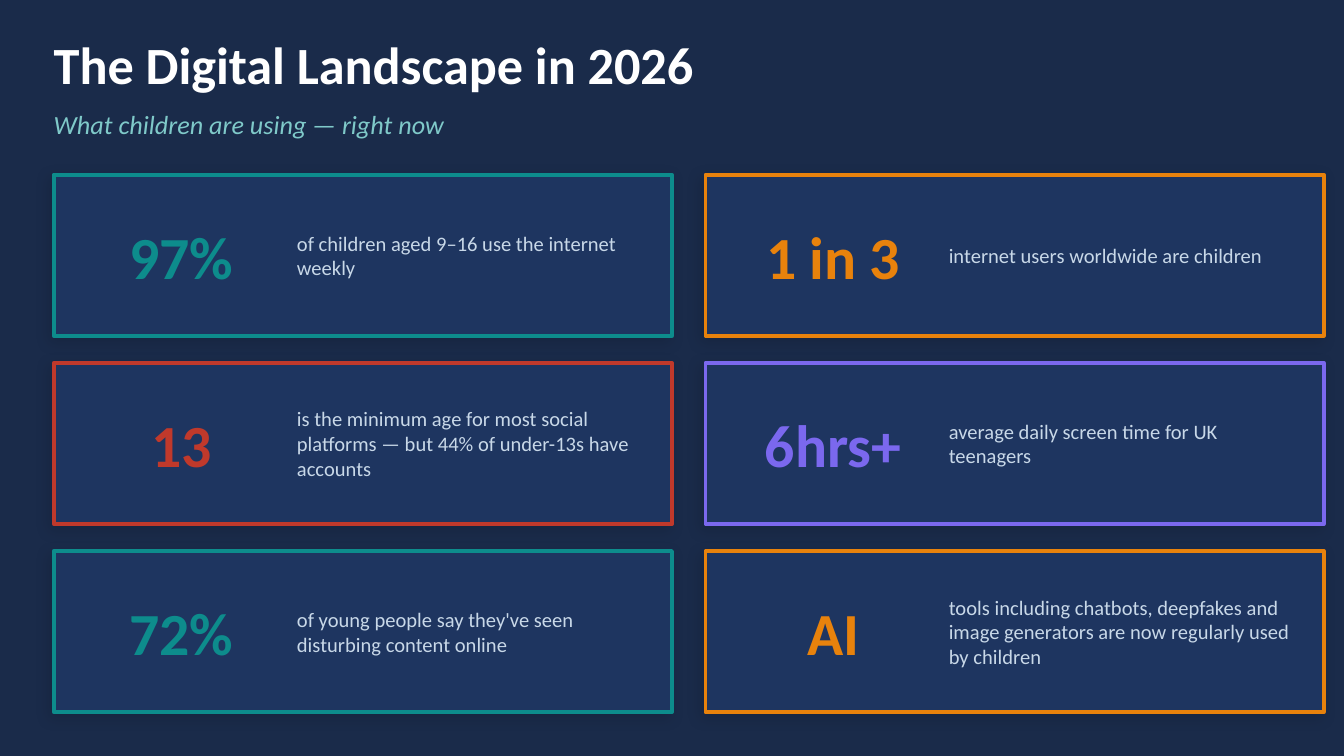
from lxml import etree
from pptx import Presentation
from pptx import util as u
from pptx.dml.color import RGBColor
from pptx.enum import shapes, text
from pptx.oxml import ns

Pt = u.Pt
NAVY = RGBColor(0x1A, 0x2B, 0x4A)
PANEL = RGBColor(0x1E, 0x35, 0x60)
WHITE = RGBColor(0xFF, 0xFF, 0xFF)
AQUA = RGBColor(0x7F, 0xC9, 0xC9)
MIST = RGBColor(0xC8, 0xD8, 0xE8)
TEAL = RGBColor(0x0D, 0x8C, 0x8C)
ORANGE = RGBColor(0xE8, 0x82, 0x0C)
RED = RGBColor(0xC0, 0x39, 0x2B)
VIOLET = RGBColor(0x7B, 0x68, 0xEE)

STATS = [
    ("97%", "of children aged 9–16 use the internet weekly", TEAL),
    ("1 in 3", "internet users worldwide are children", ORANGE),
    ("13", "is the minimum age for most social platforms — but 44% of under-13s have accounts", RED),
    ("6hrs+", "average daily screen time for UK teenagers", VIOLET),
    ("72%", "of young people say they've seen disturbing content online", TEAL),
    ("AI", "tools including chatbots, deepfakes and image generators are now regularly used by children", ORANGE),
]


def add_label(slide, box, words, color, size, inset=0, align=text.PP_ALIGN.LEFT, **style):
    frame = slide.shapes.add_textbox(*map(Pt, box)).text_frame
    layout = {"word_wrap": True, "vertical_anchor": text.MSO_ANCHOR.MIDDLE}
    for side in ("left", "top", "right", "bottom"):
        layout["margin_" + side] = Pt(inset)
    for name, value in layout.items():
        setattr(frame, name, value)
    para = frame.paragraphs[0]
    para.alignment = align
    run = para.add_run()
    run.text = words
    for name, value in {"name": "Calibri", "size": Pt(size), **style}.items():
        setattr(run.font, name, value)
    run.font.color.rgb = color


def add_shadow(shape, blur, dist, angle, alpha):
    shape.shadow.inherit = False
    effects = shape.element.spPr.find(ns.qn("a:effectLst"))
    outer = etree.SubElement(effects, ns.qn("a:outerShdw"))
    values = {"blurRad": Pt(blur), "dist": Pt(dist), "dir": angle * 60000,
              "algn": "bl", "rotWithShape": 0}
    for name, value in values.items():
        outer.set(name, str(int(value)) if name != "algn" else value)
    color = etree.SubElement(outer, ns.qn("a:srgbClr"), val="000000")
    etree.SubElement(color, ns.qn("a:alpha"), val=str(alpha * 1000))


def add_header(slide, box):
    left, top, width, height = box
    add_label(slide, (left, top, width, 46.8), "The Digital Landscape in 2026",
              WHITE, 28, bold=True)
    add_label(slide, (left, top + height - 25.2, width, 25.2),
              "What children are using — right now", AQUA, 14, italic=True)


def add_card(slide, box, figure, detail, color):
    left, top, width, height = box
    pad, split = 10.8, 126
    card = slide.shapes.add_shape(shapes.MSO_SHAPE.RECTANGLE, *map(Pt, box))
    card.fill.solid()
    card.fill.fore_color.rgb = PANEL
    card.line.color.rgb = color
    card.line.width = Pt(2)
    add_shadow(card, blur=8, dist=3, angle=135, alpha=12)
    add_label(slide, (left + pad, top, split - pad, height), figure, color, 32,
              align=text.PP_ALIGN.CENTER, bold=True)
    add_label(slide, (left + split, top, width - split - pad, height), detail,
              MIST, 11, inset=4.32)


def add_grid(slide, box, cols=2, rows=3, col_gap=18, row_gap=14.4):
    left, top, width, height = box
    wide = (width - col_gap * (cols - 1)) / cols
    high = (height - row_gap * (rows - 1)) / rows
    for index, stat in enumerate(STATS):
        row, col = divmod(index, cols)
        place = (left + col * (wide + col_gap), top + row * (high + row_gap), wide, high)
        add_card(slide, place, *stat)


def main():
    deck = Presentation()
    deck.slide_width, deck.slide_height = Pt(720), Pt(405)
    slide = deck.slides.add_slide(deck.slide_layouts[6])
    slide.background.fill.solid()
    slide.background.fill.fore_color.rgb = NAVY
    add_header(slide, (28.8, 10.8, 662.4, 68.4))
    add_grid(slide, (28.8, 93.6, 680.4, 288))
    deck.save("out.pptx")


if __name__ == "__main__":
    main()
